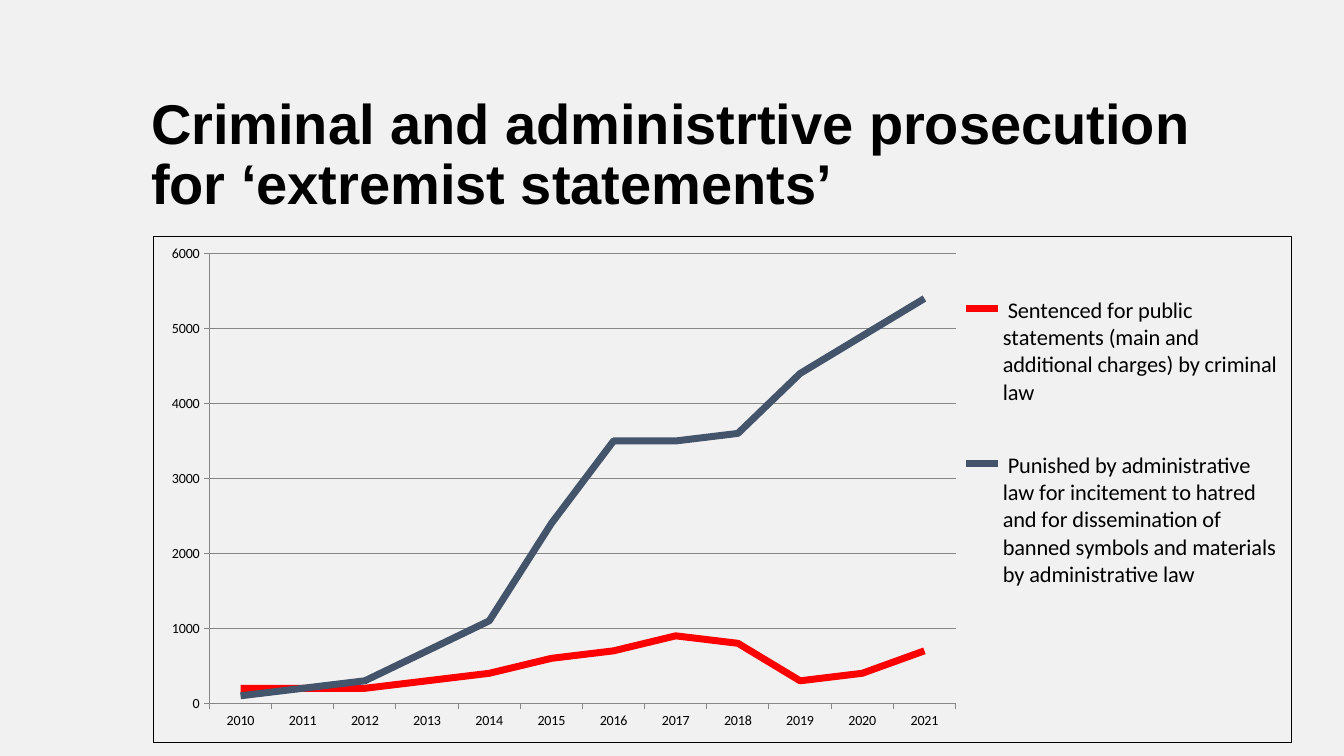
from lxml import etree
from pptx import Presentation, util as u
from pptx.chart.data import CategoryChartData
from pptx.dml.color import RGBColor
from pptx.enum import chart as ch, text
from pptx.oxml import parse_xml
from pptx.oxml.ns import nsdecls, qn

BACKGROUND = RGBColor(0xF1, 0xF1, 0xF2)
BLACK = RGBColor(0, 0, 0)
RED = RGBColor(0xFF, 0, 0)
SLATE = RGBColor(0x44, 0x54, 0x6A)
GREY = RGBColor(0x86, 0x86, 0x86)

YEARS = [str(year) for year in range(2010, 2022)]
SERIES = [
    (" Sentenced for public statements (main and additional charges) by criminal law", RED,
     (200, 200, 200, 300, 400, 600, 700, 900, 800, 300, 400, 700)),
    (" Punished by administrative law for incitement to hatred and for dissemination of "
     "banned symbols and materials by administrative law", SLATE,
     (100, 200, 300, 700, 1100, 2400, 3500, 3500, 3600, 4400, 4900, 5400)),
]


def set_font(font, size, name="Calibri", color=BLACK, bold=False):
    font.size, font.name, font.bold = u.Pt(size), name, bold
    font.color.rgb = color


def add_text(s, box, content, **fmt):
    tf = s.shapes.add_textbox(*box).text_frame
    tf.word_wrap = True
    tf.vertical_anchor = text.MSO_ANCHOR.TOP
    p = tf.paragraphs[0]
    p.text = content
    p.line_spacing = 0.9
    p.space_after = u.Pt(12)
    for r in p.runs:
        set_font(r.font, **fmt)


def set_layout(parent, box, inner=False):
    """Place a chart part; box is left, top, width, height in percent of the chart."""
    for old in parent.findall(qn("c:layout")):
        parent.remove(old)
    layout = parse_xml(f"<c:layout {nsdecls('c')}><c:manualLayout/></c:layout>")
    values = [("layoutTarget", "inner")] if inner else []
    values += [("xMode", "edge"), ("yMode", "edge")]
    values += [(side, round(share / 100, 3)) for side, share in zip("xywh", box)]
    for tag, value in values:
        etree.SubElement(layout[0], qn(f"c:{tag}")).set("val", str(value))
    return layout


def style_axis(axis):
    set_font(axis.tick_labels.font, 10)
    axis.major_tick_mark = ch.XL_TICK_MARK.OUTSIDE
    axis.format.line.color.rgb = GREY


def add_prosecution_chart(s, box):
    data = CategoryChartData(number_format="0")
    data.categories = YEARS
    for name, _, values in SERIES:
        data.add_series(name, values)
    chart = s.shapes.add_chart(ch.XL_CHART_TYPE.LINE, *box, data).chart
    set_font(chart.font, 10, "Arial")
    chart.has_title = False

    # Lines
    for line, (_, color, _) in zip(chart.plots[0].series, SERIES):
        line.smooth = False
        line.marker.style = ch.XL_MARKER_STYLE.NONE
        line.format.line.color.rgb = color
        line.format.line.width = u.Pt(5)

    # Axes
    for axis in (chart.category_axis, chart.value_axis):
        style_axis(axis)
    scale = chart.value_axis
    scale.minimum_scale, scale.maximum_scale, scale.major_unit = 0, 6000, 1000
    scale.has_major_gridlines = True
    scale.major_gridlines.format.line.color.rgb = GREY

    # Legend
    chart.has_legend = True
    legend = chart.legend
    legend.position = ch.XL_LEGEND_POSITION.RIGHT
    legend.include_in_layout = False
    set_font(legend.font, 16)
    position = legend._element.find(qn("c:legendPos"))
    position.addnext(set_layout(legend._element, (71.2, 3, 27.8, 75.7)))

    # Plot area and border
    space = chart._chartSpace
    plot = space.chart.plotArea
    plot.insert(0, set_layout(plot, (4.9, 3.4, 65.6, 88.9), inner=True))
    space.chart.addnext(parse_xml(
        f"<c:spPr {nsdecls('c', 'a')}><a:noFill/><a:ln w='{u.Pt(0.75)}'>"
        f"<a:solidFill><a:srgbClr val='{BLACK}'/></a:solidFill></a:ln></c:spPr>"))


def main():
    prs = Presentation()
    prs.slide_width, prs.slide_height = u.Inches(13.33), u.Inches(7.5)
    s = prs.slides.add_slide(prs.slide_layouts[6])
    s.background.fill.solid()
    s.background.fill.fore_color.rgb = BACKGROUND

    # Title
    title_box = [u.Inches(v) for v in (1.4, 0.9, 11.76, 6.33)]
    add_text(s, title_box, "Criminal and administrtive prosecution\vfor ‘extremist statements’",
             size=40, name="Arial", bold=True)

    # Chart
    add_prosecution_chart(s, [u.Inches(v) for v in (1.52, 2.34, 11.29, 5.03)])
    prs.save("out.pptx")


if __name__ == "__main__":
    main()
